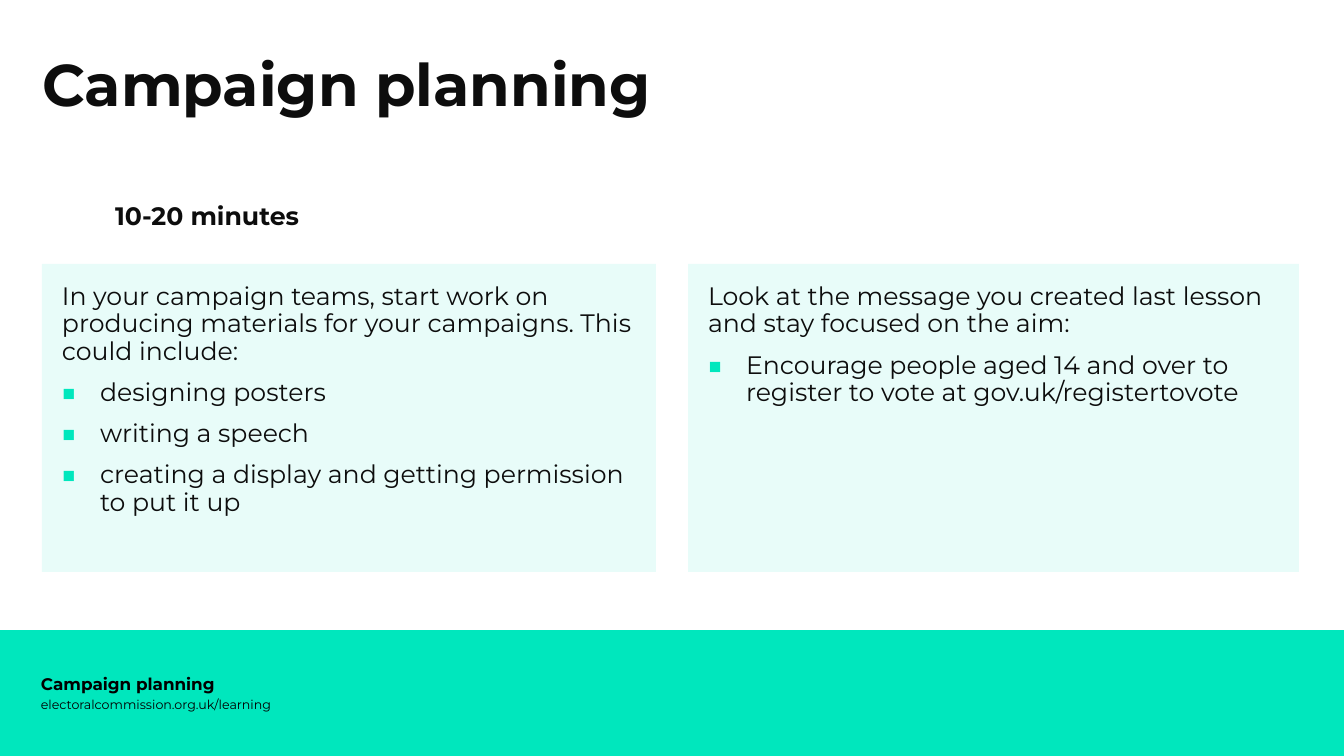
from lxml import etree
from pptx import Presentation
from pptx import util as u
from pptx.dml.color import RGBColor
from pptx.enum import shapes, text
from pptx.oxml.ns import qn

HUES = {"mint": "00E7BD", "ink": "0D0D0D", "black": "000000"}
FONT = "Montserrat"


def px(n):
    return u.Emu(round(n * 914400 / 100.8))


class Deck:
    """Holds the style and the current slide, and adds each kind of element."""

    def __init__(self):
        self.prs = Presentation()
        self.prs.slide_width, self.prs.slide_height = px(1344), px(756)
        self.slide = self.prs.slides.add_slide(self.prs.slide_layouts[4])
        self.holders = {p.placeholder_format.idx: p for p in self.slide.placeholders}

    def paint(self, shape, hue, alpha=None):
        shape.fill.solid()
        shape.fill.fore_color.rgb = RGBColor.from_string(HUES[hue])
        if alpha:
            tone = next(shape.element.spPr.iter(qn("a:srgbClr")))
            etree.SubElement(tone, qn("a:alpha")).set("val", str(alpha * 1000))

    def band(self, box):
        bar = self.slide.shapes.add_shape(shapes.MSO_SHAPE.RECTANGLE, *map(px, box))
        bar.shadow.inherit = False
        self.paint(bar, "mint")
        bar.line.fill.background()

    def bullet(self, para, mark):
        props = para._p.get_or_add_pPr()
        props.set("marL", str(px(38) if mark else 0))
        props.set("indent", str(px(-38) if mark else 0))
        if not mark:
            etree.SubElement(props, qn("a:buNone"))
            return
        tint = etree.SubElement(props, qn("a:buClr"))
        etree.SubElement(tint, qn("a:srgbClr")).set("val", HUES["mint"])
        etree.SubElement(props, qn("a:buSzPct")).set("val", "140000")
        etree.SubElement(props, qn("a:buFont")).set("typeface", FONT)
        etree.SubElement(props, qn("a:buChar")).set("char", "▪")

    def letter(self, shape, lines, size, bold=False, hue="ink", lead=1.0, anchor="TOP"):
        frame = shape.text_frame
        frame.text = "\n".join(lines)
        frame.word_wrap = True
        frame.auto_size = text.MSO_AUTO_SIZE.NONE
        frame.vertical_anchor = text.MSO_ANCHOR[anchor]
        for i, para in enumerate(frame.paragraphs):
            self.bullet(para, i > 0)
            para.alignment = text.PP_ALIGN.LEFT
            para.line_spacing = lead
            para.space_before = u.Pt(10 if i else 0)
            for run in para.runs:
                run.font.name, run.font.size, run.font.bold = FONT, u.Pt(size), bold
                run.font.color.rgb = RGBColor.from_string(HUES[hue])

    def place(self, idx, box, lines, size, **style):
        shape = self.holders.pop(idx)
        shape.left, shape.top, shape.width, shape.height = map(px, box)
        self.letter(shape, lines, size, **style)
        return shape

    def panel(self, idx, box, lines):
        shape = self.place(idx, box, lines, 18, lead=0.9)
        self.paint(shape, "mint", 9)
        frame = shape.text_frame
        frame.margin_left = frame.margin_right = px(20)
        frame.margin_top = frame.margin_bottom = px(20)

    def label(self, box, line, size, bold=False):
        shape = self.slide.shapes.add_textbox(*map(px, box))
        self.letter(shape, [line], size, bold=bold, hue="black", anchor="MIDDLE")

    def save(self):
        for spare in self.holders.values():
            spare.element.getparent().remove(spare.element)
        self.prs.save("out.pptx")


def main():
    deck = Deck()
    deck.band((0, 630, 1344, 126))
    deck.place(0, (32, 51, 848, 121), ["Campaign planning"], 42, bold=True, lead=0.9)
    deck.place(1, (105, 201, 624, 35), ["10-20 minutes"], 18, bold=True, lead=0.8)
    deck.panel(2, (42, 264, 614, 308), [
        "In your campaign teams, start work on producing materials for your campaigns. "
        "This could include:",
        "designing posters",
        "writing a speech",
        "creating a display and getting permission to put it up",
    ])
    deck.panel(4, (688, 264, 611, 308), [
        "Look at the message you created last lesson and stay focused on the aim:",
        "Encourage people aged 14 and over to register to vote at gov.uk/registertovote",
    ])
    deck.label((31, 664, 771, 40), "Campaign planning", 12, bold=True)
    deck.label((31, 684, 771, 40), "electoralcommission.org.uk/learning", 9)
    deck.save()


if __name__ == "__main__":
    main()
